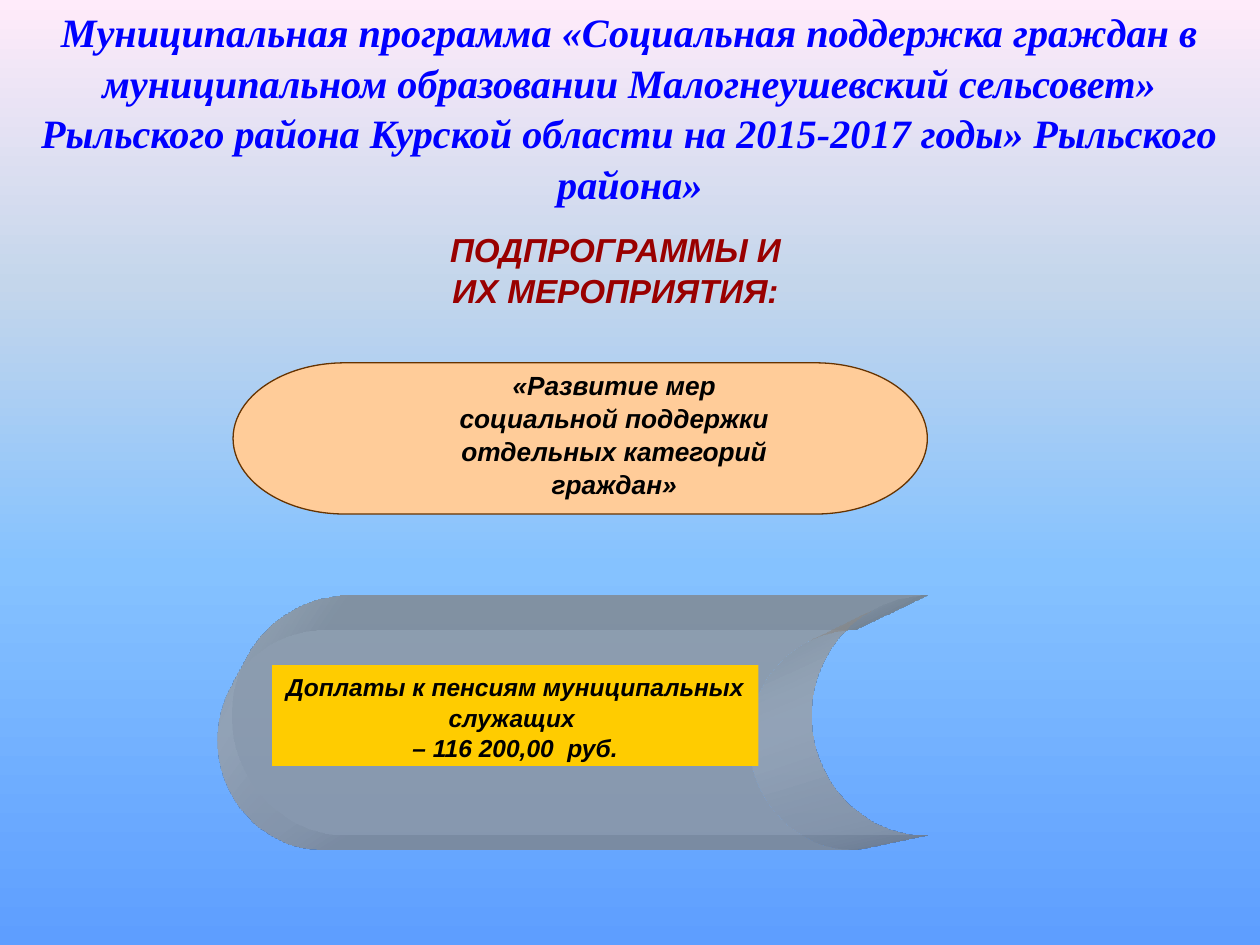
import dataclasses

import lxml.etree
import pptx
import pptx.dml.color
import pptx.enum.shapes
import pptx.enum.text
import pptx.oxml
import pptx.oxml.ns
import pptx.util

Inches = pptx.util.Inches
ShapeKind = pptx.enum.shapes.MSO_SHAPE


@dataclasses.dataclass(frozen=True)
class Theme:
    background: tuple = ((0, "FFEBFA"), (30, "C4D6EB"), (60, "85C2FF"), (100, "5E9EFF"))
    title_color: str = "0000FF"
    heading_color: str = "990000"
    text_color: str = "000000"
    subprogram_fill: str = "FFCC99"
    subprogram_line: str = "663300"
    storage_fill: str = "C0C0C0"
    storage_opacity: int = 49
    measure_fill: str = "FFCC00"
    title_font: str = "Times New Roman"
    text_font: str = "Arial"
    title_size: int = 23
    heading_size: int = 19
    subprogram_size: int = 15
    measure_size: int = 14
    line_spacing: float = 1.05


THEME = Theme()


def rgb(color):
    return pptx.dml.color.RGBColor.from_string(color)


def drawing_xml(tag, content):
    return pptx.oxml.parse_xml(
        f'<a:{tag} {pptx.oxml.ns.nsdecls("a")}>{content}</a:{tag}>'
    )


def set_background(slide):
    fill = slide.background.fill
    fill.gradient()
    fill.gradient_angle = 270
    stops = "".join(
        f'<a:gs pos="{position * 1000}"><a:srgbClr val="{color}"/></a:gs>'
        for position, color in THEME.background
    )
    stop_list = slide.background._cSld.find(".//" + pptx.oxml.ns.qn("a:gsLst"))
    stop_list.getparent().replace(stop_list, drawing_xml("gsLst", stops))


def set_place(shape, place):
    shape.left, shape.top, shape.width, shape.height = map(Inches, place)


def write_text(shape, *paragraphs, size, color=THEME.text_color, font=THEME.text_font):
    frame = shape.text_frame
    frame.word_wrap = True
    frame.auto_size = pptx.enum.text.MSO_AUTO_SIZE.NONE
    frame.vertical_anchor = pptx.enum.text.MSO_ANCHOR.TOP
    frame.margin_left = frame.margin_right = Inches(0.09)
    frame.margin_top = frame.margin_bottom = Inches(0.04)
    for index, text in enumerate(paragraphs):
        paragraph = frame.add_paragraph() if index else frame.paragraphs[0]
        paragraph.alignment = pptx.enum.text.PP_ALIGN.CENTER
        paragraph.line_spacing = THEME.line_spacing
        paragraph.space_before = pptx.util.Pt(0)
        run = paragraph.add_run()
        run.text = text
        run.font.name = font
        run.font.size = pptx.util.Pt(size)
        run.font.bold = run.font.italic = True
        run.font.color.rgb = rgb(color)


def add_text_box(slide, place, text, **text_format):
    write_text(slide.shapes.add_textbox(*map(Inches, place)), text, **text_format)


def add_filled_shape(slide, kind, place, fill, line=None):
    shape = slide.shapes.add_shape(kind, *map(Inches, place))
    shape.shadow.inherit = False
    shape.fill.solid()
    shape.fill.fore_color.rgb = rgb(fill)
    if line:
        shape.line.color.rgb = rgb(line)
        shape.line.width = pptx.util.Pt(0.75)
    else:
        shape.line.fill.background()
    return shape


def set_opacity(shape, percent):
    color = shape._element.spPr.find(".//" + pptx.oxml.ns.qn("a:srgbClr"))
    alpha = lxml.etree.SubElement(color, pptx.oxml.ns.qn("a:alpha"))
    alpha.set("val", str(percent * 1000))


def extrude(shape, color):
    properties = shape._element.spPr
    properties.append(drawing_xml(
        "scene3d",
        '<a:camera prst="legacyPerspectiveBottomLeft"/>'
        '<a:lightRig rig="legacyFlat3" dir="t"/>',
    ))
    solid = drawing_xml(
        "sp3d", f'<a:extrusionClr><a:srgbClr val="{color}"/></a:extrusionClr>'
    )
    solid.set("extrusionH", "887400")
    solid.set("prstMaterial", "legacyMatte")
    properties.append(solid)


def add_title(slide):
    title = slide.shapes.title
    set_place(title, (0, 0, 10, 1.64))
    write_text(
        title,
        "Муниципальная программа «Социальная поддержка граждан в муниципальном "
        "образовании Малогнеушевский сельсовет» Рыльского района Курской области "
        "на 2015-2017 годы» Рыльского района»",
        size=THEME.title_size, color=THEME.title_color, font=THEME.title_font,
    )


def main():
    presentation = pptx.Presentation()
    presentation.slide_width = Inches(10)
    presentation.slide_height = Inches(7.5)
    slide = presentation.slides.add_slide(presentation.slide_layouts[5])
    set_background(slide)
    add_title(slide)

    add_filled_shape(slide, ShapeKind.FLOWCHART_TERMINATOR, (1.85, 2.88, 5.51, 1.2),
                     THEME.subprogram_fill, THEME.subprogram_line)
    add_text_box(slide, (3.41, 2.88, 2.93, 1.09),
                 "«Развитие мер социальной поддержки отдельных категорий граждан»",
                 size=THEME.subprogram_size)
    add_text_box(slide, (3.35, 1.76, 3.07, 0.72), "ПОДПРОГРАММЫ И ИХ МЕРОПРИЯТИЯ:",
                 size=THEME.heading_size, color=THEME.heading_color)

    storage = add_filled_shape(slide, ShapeKind.FLOWCHART_STORED_DATA,
                               (1.85, 4.73, 5.51, 1.89), THEME.storage_fill)
    set_opacity(storage, THEME.storage_opacity)
    extrude(storage, THEME.storage_fill)

    measure = add_filled_shape(slide, ShapeKind.RECTANGLE, (2.16, 5.28, 3.86, 0.8),
                               THEME.measure_fill)
    write_text(measure, "Доплаты к пенсиям муниципальных служащих ",
               "– 116 200,00  руб.", size=THEME.measure_size)
    presentation.save("out.pptx")


if __name__ == "__main__":
    main()
